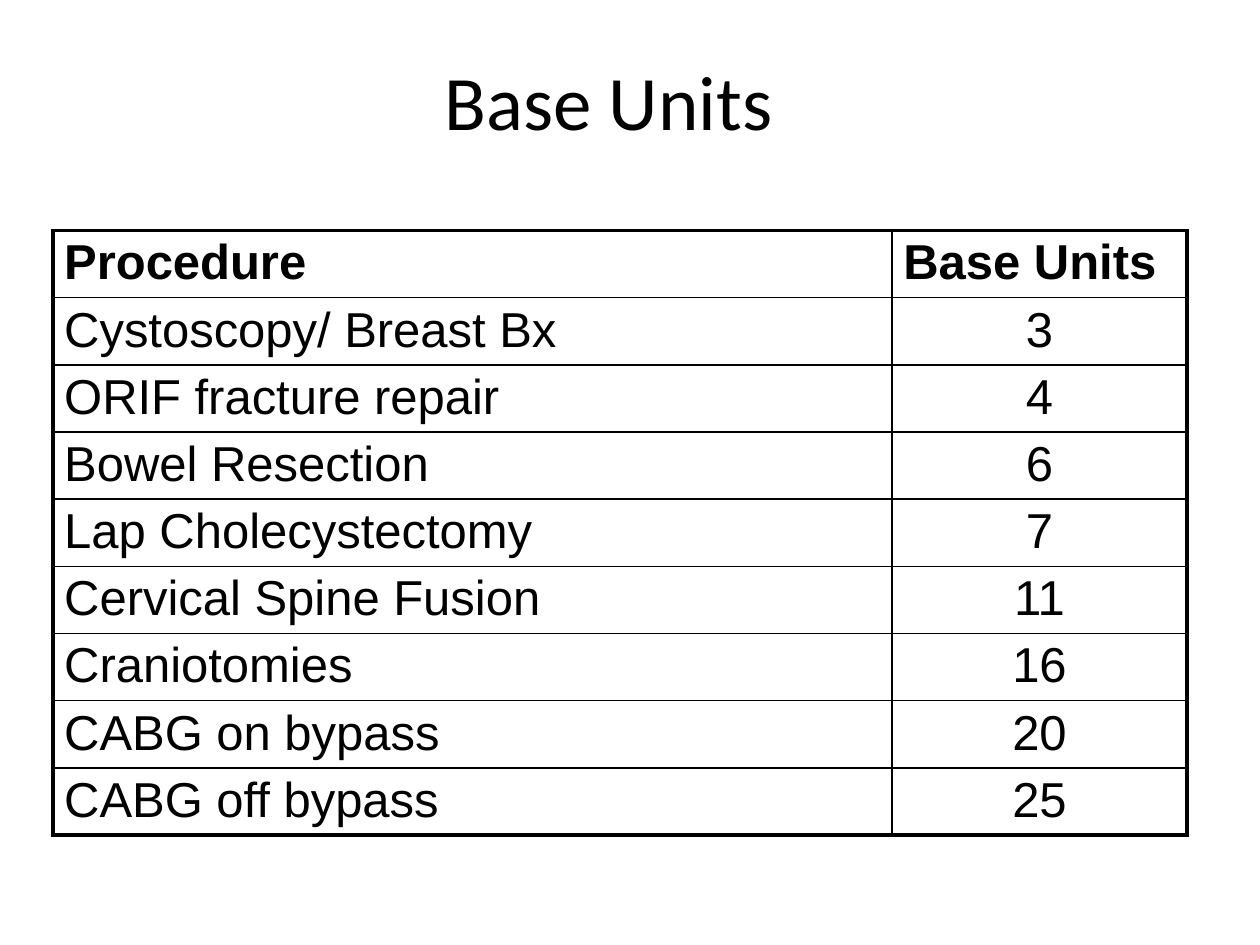
from dataclasses import dataclass

from lxml.etree import SubElement
from pptx import Presentation
from pptx.dml.color import RGBColor
from pptx.enum.text import MSO_ANCHOR, PP_ALIGN
from pptx.oxml.ns import qn
from pptx.util import Inches, Pt


@dataclass(frozen=True)
class Theme:
    """Colours, fonts and sizes of the slide."""
    ink: str = "000000"
    title_font: str = "Calibri"
    body_font: str = "Arial"
    title_size: int = 44
    body_size: int = 28
    outer_line: float = 2.25
    inner_line: float = 1


THEME = Theme()
ROWS = [
    ("Procedure", "Base Units"),
    ("Cystoscopy/ Breast Bx", "3"),
    ("ORIF fracture repair", "4"),
    ("Bowel Resection", "6"),
    ("Lap Cholecystectomy", "7"),
    ("Cervical Spine Fusion", "11"),
    ("Craniotomies", "16"),
    ("CABG on bypass", "20"),
    ("CABG off bypass", "25"),
]


def write(tf, text, font=THEME.body_font, size=THEME.body_size, bold=False,
          align=PP_ALIGN.LEFT):
    """Put one formatted line of text into a text frame."""
    p = tf.paragraphs[0]
    p.alignment = align
    r = p.add_run()
    r.text = text
    r.font.name, r.font.size, r.font.bold = font, Pt(size), bold
    r.font.color.rgb = RGBColor.from_string(THEME.ink)


def set_borders(cell, widths):
    """Draw the left, right, top and bottom borders of a cell."""
    tc_pr = cell._tc.get_or_add_tcPr()
    for i, (side, width) in enumerate(zip("LRTB", widths)):
        ln = SubElement(tc_pr, qn(f"a:ln{side}"), w=str(Pt(width)))
        fill = SubElement(ln, qn("a:solidFill"))
        SubElement(fill, qn("a:srgbClr"), val=THEME.ink)
        tc_pr.insert(i, ln)


def add_title(s, text, box):
    """Place and format the title placeholder in the box."""
    sp = s.shapes.title
    sp.left, sp.top, sp.width, sp.height = box
    sp.text_frame.vertical_anchor = MSO_ANCHOR.MIDDLE
    write(sp.text_frame, text, font=THEME.title_font, size=THEME.title_size,
          align=PP_ALIGN.CENTER)


def add_units_table(s, rows, box, shares):
    """Fill the box with a ruled table that has a heavier outer frame."""
    table = s.shapes.add_table(len(rows), len(shares), *box).table
    table.first_row = table.horz_banding = False
    for col, share in zip(table.columns, shares):
        col.width = int(box[2] * share)
    last_row, last_col = len(rows) - 1, len(shares) - 1
    for i, values in enumerate(rows):
        for j, text in enumerate(values):
            cell = table.cell(i, j)
            cell.fill.background()
            cell.margin_left = cell.margin_right = Inches(0.09)
            cell.margin_top = cell.margin_bottom = Inches(0.04)
            centred = i > 0 and j > 0
            write(cell.text_frame, text, bold=i == 0,
                  align=PP_ALIGN.CENTER if centred else PP_ALIGN.LEFT)
            edges = (j == 0, j == last_col, i == 0, i == last_row)
            set_borders(cell, [THEME.outer_line if edge else THEME.inner_line
                               for edge in edges])


def main():
    """Build and save the slide."""
    prs = Presentation()
    prs.slide_width, prs.slide_height = Inches(10), Inches(7.5)
    s = prs.slides.add_slide(prs.slide_layouts[5])
    add_title(s, "Base Units",
              (Inches(0.33), Inches(0.17), Inches(9), Inches(1.25)))
    add_units_table(s, ROWS,
                    (Inches(0.42), Inches(1.83), Inches(9), Inches(4.8)),
                    (0.74, 0.26))
    prs.save("out.pptx")


if __name__ == "__main__":
    main()
